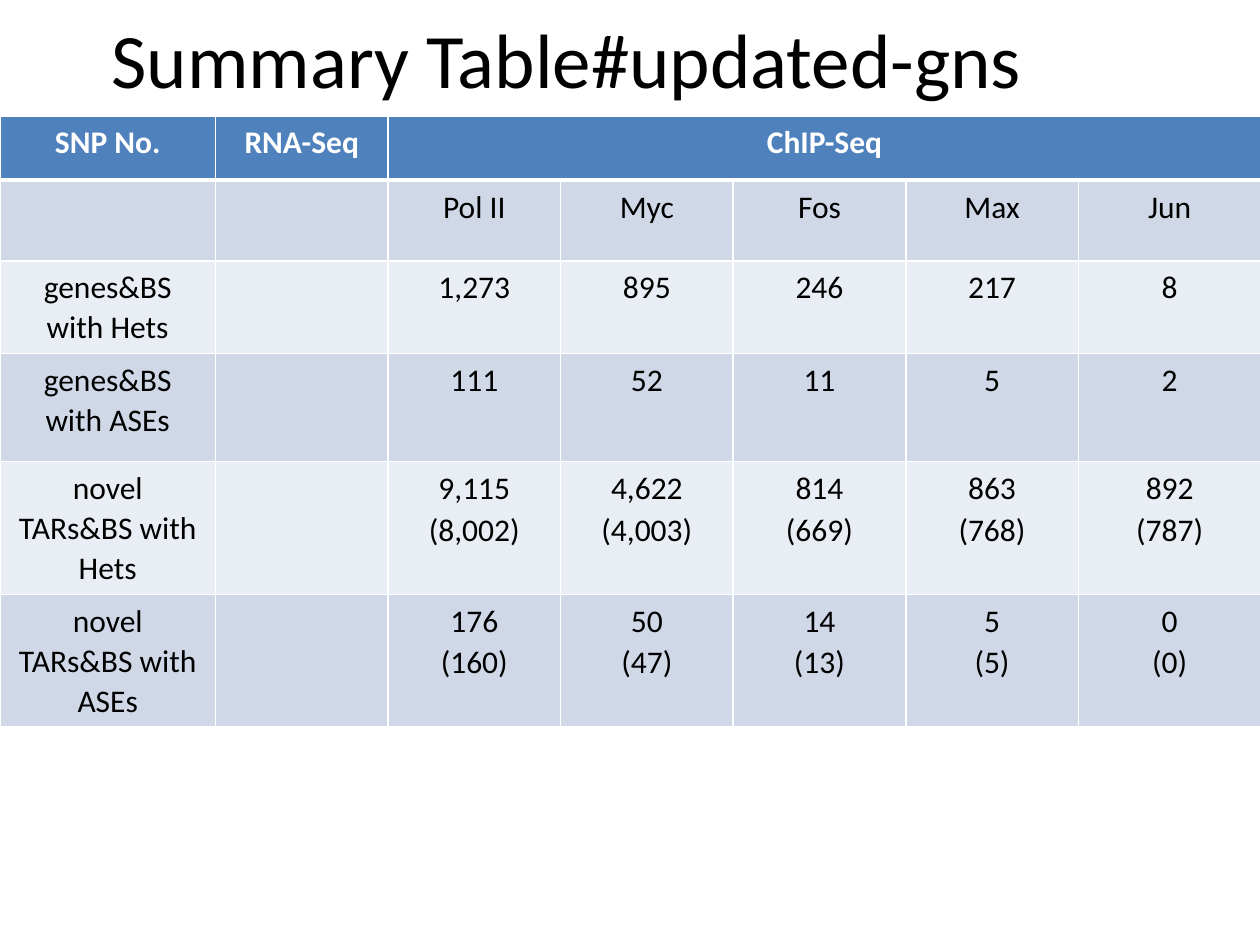
from lxml import etree
from pptx import Presentation
from pptx import util as u
from pptx.dml.color import RGBColor
from pptx.enum import text
from pptx.oxml.ns import qn

COLORS = {
    "header": "4F81BD", "dark_band": "D0D8E8", "light_band": "E9EDF4",
    "border": "FFFFFF", "header_text": "FFFFFF", "body_text": "000000",
}
COLUMN_WIDTHS = [1.71] + [1.37] * 5 + [1.45]
ROW_HEIGHTS = [0.51, 0.64, 0.73, 0.86, 1.04, 1.04]
TABLE_TOP = 0.92
LINE_SPACINGS = [1.04, 1.08]  # count, then the count in brackets
ROWS = [
    ["SNP No.", "RNA-Seq", "ChIP-Seq", "", "", "", ""],
    ["", "", "Pol II", "Myc", "Fos", "Max", "Jun"],
    ["genes&BS with Hets", "", "1,273", "895", "246", "217", "8"],
    ["genes&BS with ASEs", "", "111", "52", "11", "5", "2"],
    ["novel TARs&BS with Hets", "", "9,115\n(8,002)", "4,622\n(4,003)",
     "814\n(669)", "863\n(768)", "892\n(787)"],
    ["novel TARs&BS with ASEs", "", "176\n(160)", "50\n(47)",
     "14\n(13)", "5\n(5)", "0\n(0)"],
]


def format_font(font, color, **values):
    font.color.rgb = RGBColor.from_string(COLORS[color])
    for name, value in {"name": "Calibri", **values}.items():
        setattr(font, name, value)


def add_borders(cell, widths):
    properties = cell._tc.get_or_add_tcPr()
    for side, width in widths.items():
        line = etree.SubElement(properties, qn(f"a:ln{side}"), w=str(u.Pt(width)))
        fill = etree.SubElement(line, qn("a:solidFill"))
        etree.SubElement(fill, qn("a:srgbClr"), val=COLORS["border"])


def format_cell(cell, wording, row):
    # The rule below the header is thicker than the other borders
    add_borders(cell, {"L": 1, "R": 1, "T": 3 if row == 1 else 1,
                       "B": 3 if row == 0 else 1})
    band = "header" if row == 0 else "dark_band" if row % 2 else "light_band"
    cell.fill.solid()
    cell.fill.fore_color.rgb = RGBColor.from_string(COLORS[band])
    if not wording:
        return
    cell.text = wording
    for paragraph, spacing in zip(cell.text_frame.paragraphs, LINE_SPACINGS):
        paragraph.alignment = text.PP_ALIGN.CENTER
        paragraph.line_spacing = spacing
        format_font(paragraph.runs[0].font,
                    "body_text" if row else "header_text",
                    size=u.Pt(18), bold=row == 0)


def add_summary_table(slide, slide_width):
    table = slide.shapes.add_table(
        len(ROWS), len(COLUMN_WIDTHS), 0, u.Inches(TABLE_TOP),
        slide_width, u.Inches(sum(ROW_HEIGHTS))).table
    for column, width in zip(table.columns, COLUMN_WIDTHS):
        column.width = u.Inches(width)
    for row, height in zip(table.rows, ROW_HEIGHTS):
        row.height = u.Inches(height)
    for row, wordings in enumerate(ROWS):
        for column, wording in enumerate(wordings):
            format_cell(table.cell(row, column), wording, row)
    # ChIP-Seq spans all its factors
    table.cell(0, 2).merge(table.cell(0, len(COLUMN_WIDTHS) - 1))


def add_title(slide, wording):
    title = slide.shapes.title
    box = {"left": 0, "top": -0.17, "width": 9, "height": 1.25}
    for name, value in box.items():
        setattr(title, name, u.Inches(value))
    title.text_frame.text = wording
    title.text_frame.vertical_anchor = text.MSO_ANCHOR.MIDDLE
    paragraph = title.text_frame.paragraphs[0]
    paragraph.alignment = text.PP_ALIGN.CENTER
    format_font(paragraph.runs[0].font, "body_text", size=u.Pt(44))
    # Bring the title in front of the table
    title.element.getparent().append(title.element)


def main():
    presentation = Presentation()
    presentation.slide_width = u.Inches(10)
    presentation.slide_height = u.Inches(7.5)
    slide = presentation.slides.add_slide(presentation.slide_layouts[5])
    add_summary_table(slide, presentation.slide_width)
    add_title(slide, "Summary Table#updated-gns")
    presentation.save("out.pptx")


if __name__ == "__main__":
    main()
